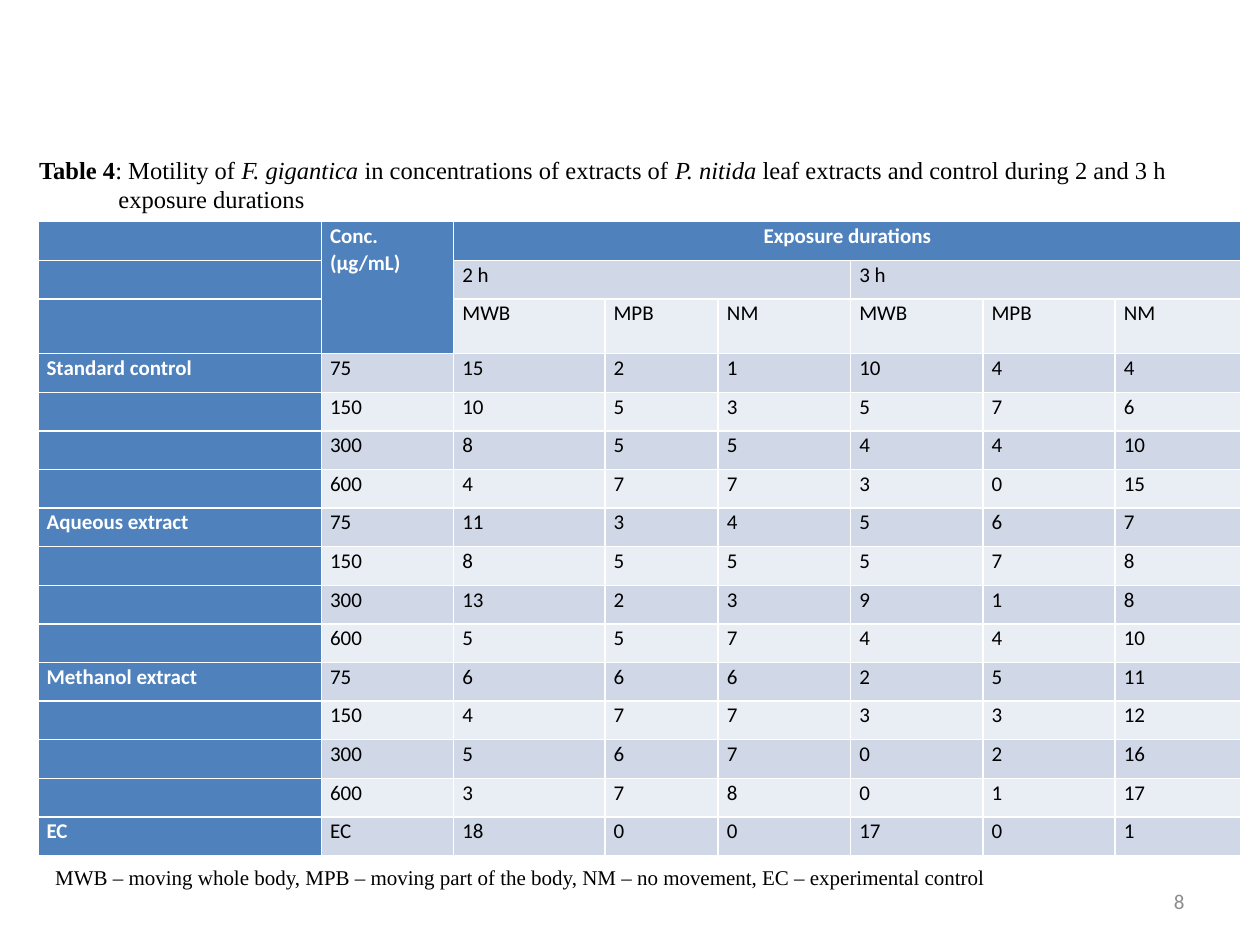
from pptx import Presentation
from pptx.dml.color import RGBColor
from pptx.enum import text
from pptx.util import Inches, Pt

BLACK = RGBColor(0x00, 0x00, 0x00)
WHITE = RGBColor(0xFF, 0xFF, 0xFF)
GREY = RGBColor(0x8C, 0x8C, 0x8C)
BLUE = RGBColor(0x4F, 0x81, 0xBD)
BANDS = [RGBColor(0xE9, 0xED, 0xF4), RGBColor(0xD0, 0xD8, 0xE8)]
SERIF, SANS = "Times New Roman", "Calibri"


def style(span, name, size, color, bold=False, italic=False):
    span.font.name = name
    span.font.size = Pt(size)
    span.font.color.rgb = color
    span.font.bold = bold
    span.font.italic = italic


def add_line(page, left, top, width, height, words):
    box = page.shapes.add_textbox(Inches(left), Inches(top), Inches(width), Inches(height))
    box.text_frame.word_wrap = True
    box.text_frame.text = words
    return box.text_frame


deck = Presentation()
deck.slide_width, deck.slide_height = Inches(10), Inches(7.5)
page = deck.slides.add_slide(deck.slide_layouts[5])

# Caption in the title placeholder
caption = page.shapes.title
caption.left, caption.top = Inches(0.21), Inches(1.18)
caption.width, caption.height = Inches(9.7), Inches(0.57)
frame = caption.text_frame
frame.word_wrap = True
frame.vertical_anchor = text.MSO_ANCHOR.TOP
frame.auto_size = text.MSO_AUTO_SIZE.NONE
first = frame.paragraphs[0]
for words, bold, italic in [
    ("Table 4", True, False),
    (": Motility of ", False, False),
    ("F. gigantica", False, True),
    (" in concentrations of extracts of ", False, False),
    ("P. nitida", False, True),
    (" leaf extracts and control during 2 and 3 h", False, False),
]:
    span = first.add_run()
    span.text = words
    style(span, SERIF, 14, BLACK, bold, italic)
second = frame.add_paragraph()
second.text = "exposure durations"
second._p.get_or_add_pPr().set("marL", str(Inches(0.63)))
style(second.runs[0], SERIF, 14, BLACK)
for para in frame.paragraphs:
    para.alignment = text.PP_ALIGN.JUSTIFY

# Table contents: two header rows, measure names, then the counts
measures = ["MWB", "MPB", "NM"]
rows = [
    ["", "Conc. (µg/mL)", "Exposure durations", "", "", "", "", ""],
    ["", "", "2 h", "", "", "3 h", "", ""],
    ["", ""] + measures * 2,
]
groups = {
    "Standard control": [
        (15, 2, 1, 10, 4, 4), (10, 5, 3, 5, 7, 6), (8, 5, 5, 4, 4, 10), (4, 7, 7, 3, 0, 15)],
    "Aqueous extract": [
        (11, 3, 4, 5, 6, 7), (8, 5, 5, 5, 7, 8), (13, 2, 3, 9, 1, 8), (5, 5, 7, 4, 4, 10)],
    "Methanol extract": [
        (6, 6, 6, 2, 5, 11), (4, 7, 7, 3, 3, 12), (5, 6, 7, 0, 2, 16), (3, 7, 8, 0, 1, 17)],
}
for group, counts in groups.items():
    for i, values in enumerate(counts):
        rows.append([group if i == 0 else "", 75 * 2 ** i, *values])
rows.append(["EC", "EC", 18, 0, 0, 17, 0, 1])

# Table grid; the default table style draws the white borders
widths = [2.25, 1.05, 1.2, 0.9, 1.05, 1.05, 1.05, 1]
table = page.shapes.add_table(
    len(rows), len(widths), Inches(0.3), Inches(1.76), Inches(9.55), Inches(4.93)).table
table.first_col = True
for column, width in zip(table.columns, widths):
    column.width = Inches(width)
for row in table.rows:
    row.height = Inches(4.6) // 15
table.rows[2].height = Inches(0.33)
for top, left, bottom, right in [(0, 1, 2, 1), (0, 2, 0, 7), (1, 2, 1, 4), (1, 5, 1, 7)]:
    table.cell(top, left).merge(table.cell(bottom, right))

# Cell fills and text
for r, values in enumerate(rows):
    for c, value in enumerate(values):
        cell = table.cell(r, c)
        heading = r == 0 or c == 0
        cell.fill.solid()
        cell.fill.fore_color.rgb = BLUE if heading else BANDS[r % 2]
        cell.margin_left = cell.margin_right = Inches(0.07)
        cell.margin_top = cell.margin_bottom = 0
        if value == "":
            continue
        cell.text_frame.text = str(value)
        para = cell.text_frame.paragraphs[0]
        para.line_spacing = 1.07
        style(para.runs[0], SANS, 12, WHITE if heading else BLACK, heading)
table.cell(0, 2).text_frame.paragraphs[0].alignment = text.PP_ALIGN.CENTER

# Abbreviations under the table
frame = add_line(
    page, 0.34, 6.8, 9.33, 0.31,
    "MWB – moving whole body, MPB – moving part of the body, "
    "NM – no movement, EC – experimental control")
para = frame.paragraphs[0]
para.line_spacing = 1.07
para.space_after = Pt(8)
style(para.runs[0], SERIF, 12, BLACK)

# Page number
frame = add_line(page, 7.17, 6.95, 2.33, 0.4, "8")
frame.vertical_anchor = text.MSO_ANCHOR.MIDDLE
para = frame.paragraphs[0]
para.alignment = text.PP_ALIGN.RIGHT
style(para.runs[0], SANS, 12, GREY)

deck.save("out.pptx")
